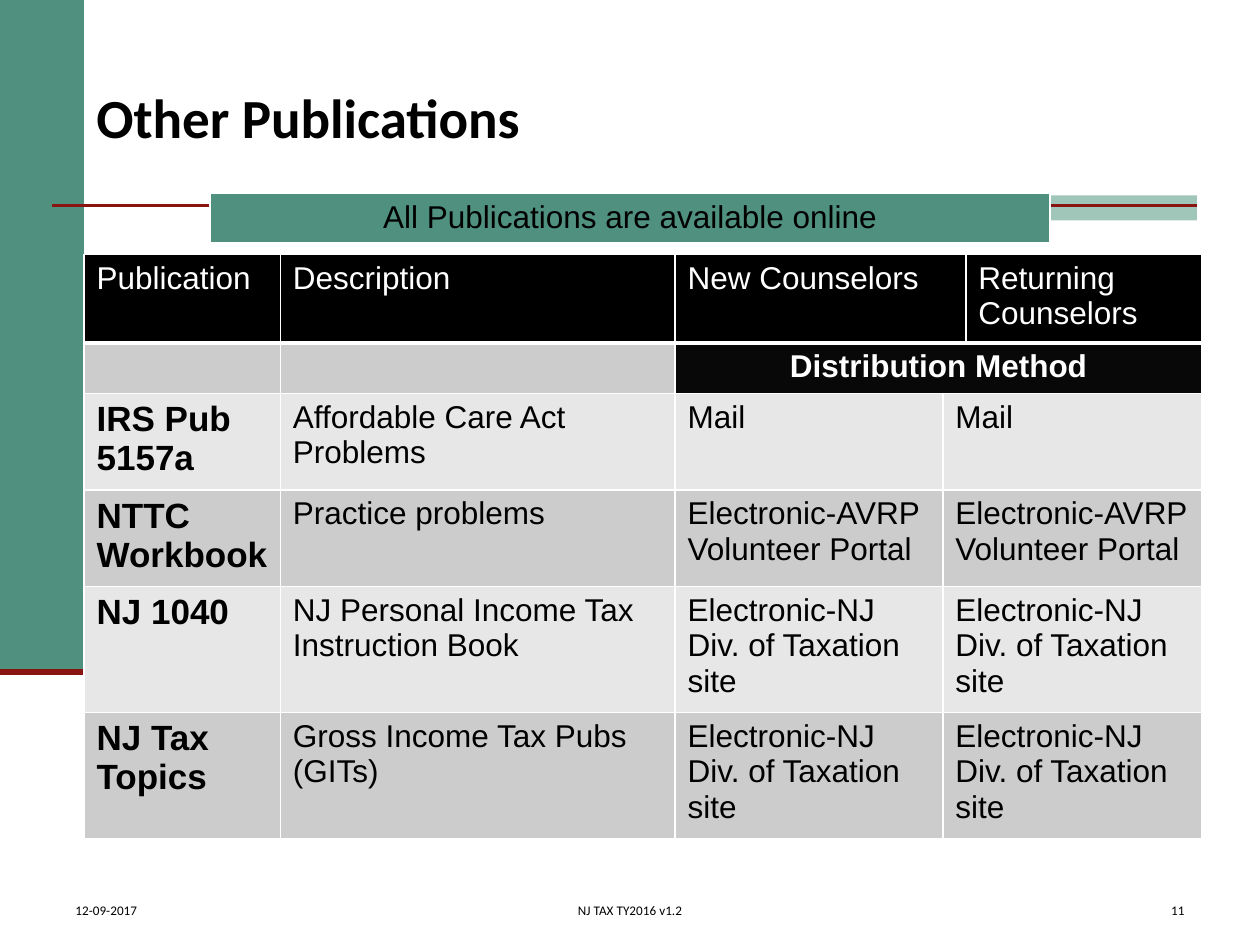
from pptx import Presentation
from pptx.dml.color import RGBColor
from pptx.enum.shapes import MSO_CONNECTOR as Connector, MSO_SHAPE as Preset
from pptx.enum.text import MSO_ANCHOR as Anchor, PP_ALIGN as Align
from pptx.oxml.xmlchemy import OxmlElement as Element
from pptx.util import Inches, Pt

THEME = {
    "green": "4F917E", "pale_green": "A0C6BA", "red": "891411",
    "black": "000000", "soft_black": "080808", "white": "FFFFFF",
    "dark_gray": "CCCCCC", "light_gray": "E7E7E7",
    "heading": "Calibri", "body": "Arial",
    "title": 31.5, "label": 20, "cell": 18, "footer": 7.5,
    "thin": 1, "thick": 3, "rule": 1.5, "base": 3.5,
}

presentation = Presentation()
presentation.slide_width, presentation.slide_height = Inches(10), Inches(7.5)
slide = presentation.slides.add_slide(presentation.slide_layouts[6])
UNIT = presentation.slide_width / 120


def write_text(frame, text, color="black", face="body", size="cell", bold=False, align=Align.LEFT):
    frame.text = text
    for paragraph in frame.paragraphs:
        paragraph.alignment = align
        font = paragraph.runs[0].font
        formats = {"name": THEME[face], "size": Pt(THEME[size]), "bold": bold}
        for name, value in formats.items():
            setattr(font, name, value)
        font.color.rgb = RGBColor.from_string(THEME[color])


def style_cell(cell, fill, bottom="thin"):
    cell.fill.solid()
    cell.fill.fore_color.rgb = RGBColor.from_string(THEME[fill])
    properties = cell._tc.get_or_add_tcPr()
    sides = {"a:lnL": "thin", "a:lnR": "thin", "a:lnT": "thin", "a:lnB": bottom}
    for position, (side, weight) in enumerate(sides.items()):
        border, paint, color = Element(side), Element("a:solidFill"), Element("a:srgbClr")
        border.set("w", str(Pt(THEME[weight])))
        color.set("val", THEME["white"])
        paint.append(color)
        border.append(paint)
        properties.insert(position, border)


for fill, box in [("green", (0, 0, 8, 64)), ("pale_green", (90, 18.6, 24, 2.4))]:
    panel = slide.shapes.add_shape(Preset.RECTANGLE, *[int(n * UNIT) for n in box])
    panel.shadow.inherit = False
    panel.fill.solid()
    panel.fill.fore_color.rgb = RGBColor.from_string(THEME[fill])
    panel.line.fill.background()

for weight, ends in [("rule", (5, 19.6, 114, 19.6)), ("base", (0, 64, 8, 64))]:
    line = slide.shapes.add_connector(Connector.STRAIGHT, *[int(n * UNIT) for n in ends])
    line.line.color.rgb = RGBColor.from_string(THEME["red"])
    line.line.width = Pt(THEME[weight])
    line._element.spPr.append(Element("a:effectLst"))

texts = [
    ("Other Publications", (8, 3.6, 106, 15), Anchor.MIDDLE, {"size": "title", "bold": True}),
    ("NJ TAX TY2016 v1.2", (39.75, 84, 40.5, 4), Anchor.BOTTOM, {"size": "footer", "align": Align.CENTER}),
    ("11", (89, 84, 25, 4), Anchor.BOTTOM, {"size": "footer", "align": Align.RIGHT}),
    ("12-09-2017", (6, 84, 26, 4), Anchor.BOTTOM, {"size": "footer"}),
]
for text, box, anchor, formats in texts:
    frame = slide.shapes.add_textbox(*[int(n * UNIT) for n in box]).text_frame
    for name, value in {"word_wrap": True, "vertical_anchor": anchor}.items():
        setattr(frame, name, value)
    write_text(frame, text, face="heading", **formats)

portal = "Electronic-AVRP Volunteer Portal"
tax_site = "Electronic-NJ Div. of Taxation site"
banner_rows = [["All Publications are available online"]]
publication_rows = [
    ["Publication", "Description", "New Counselors", "", "Returning\nCounselors"],
    ["", "", "Distribution Method", "", ""],
    ["IRS Pub 5157a", "Affordable Care Act Problems", "Mail", "Mail", ""],
    ["NTTC Workbook", "Practice problems", portal, portal, ""],
    ["NJ 1040", "NJ Personal Income Tax Instruction Book", tax_site, tax_site, ""],
    ["NJ Tax Topics", "Gross Income Tax Pubs (GITs)", tax_site, tax_site, ""],
]
tables = []
for rows, left, top, widths, heights in [
    (banner_rows, 20, 18.4, [80], [4.9]),
    (publication_rows, 8, 24.25, [18.7, 37.6, 25.5, 2.2, 22.5], [5, 4.6] + [6.1] * 4),
]:
    box = (left, top, sum(widths), sum(heights))
    table = slide.shapes.add_table(
        len(rows), len(widths), *[int(n * UNIT) for n in box]).table
    for name in ("first_row", "horz_banding"):
        setattr(table, name, False)
    for column, width in zip(table.columns, widths):
        column.width = int(width * UNIT)
    for row, height in zip(table.rows, heights):
        row.height = int(height * UNIT)
    tables.append(table)

banner, publications = tables
style_cell(banner.cell(0, 0), "green", "thick")
write_text(banner.cell(0, 0).text_frame, banner_rows[0][0], align=Align.CENTER)

merges = [(0, 2, 3), (1, 2, 4)] + [(row, 3, 4) for row in range(2, 6)]
for row, first, last in merges:
    publications.cell(row, first).merge(publications.cell(row, last))

for r, row in enumerate(publication_rows):
    for c, text in enumerate(row):
        cell = publications.cell(r, c)
        fill = "light_gray" if r % 2 == 0 else "dark_gray"
        formats = {}
        if r == 0:
            fill, formats = "black", {"color": "white"}
        elif r == 1 and c >= 2:
            fill = "soft_black"
            formats = {"color": "white", "bold": True, "align": Align.CENTER}
        elif c == 0:
            formats = {"size": "label", "bold": True}
        style_cell(cell, fill, "thick" if r == 0 else "thin")
        if text:
            write_text(cell.text_frame, text, **formats)

presentation.save("out.pptx")
